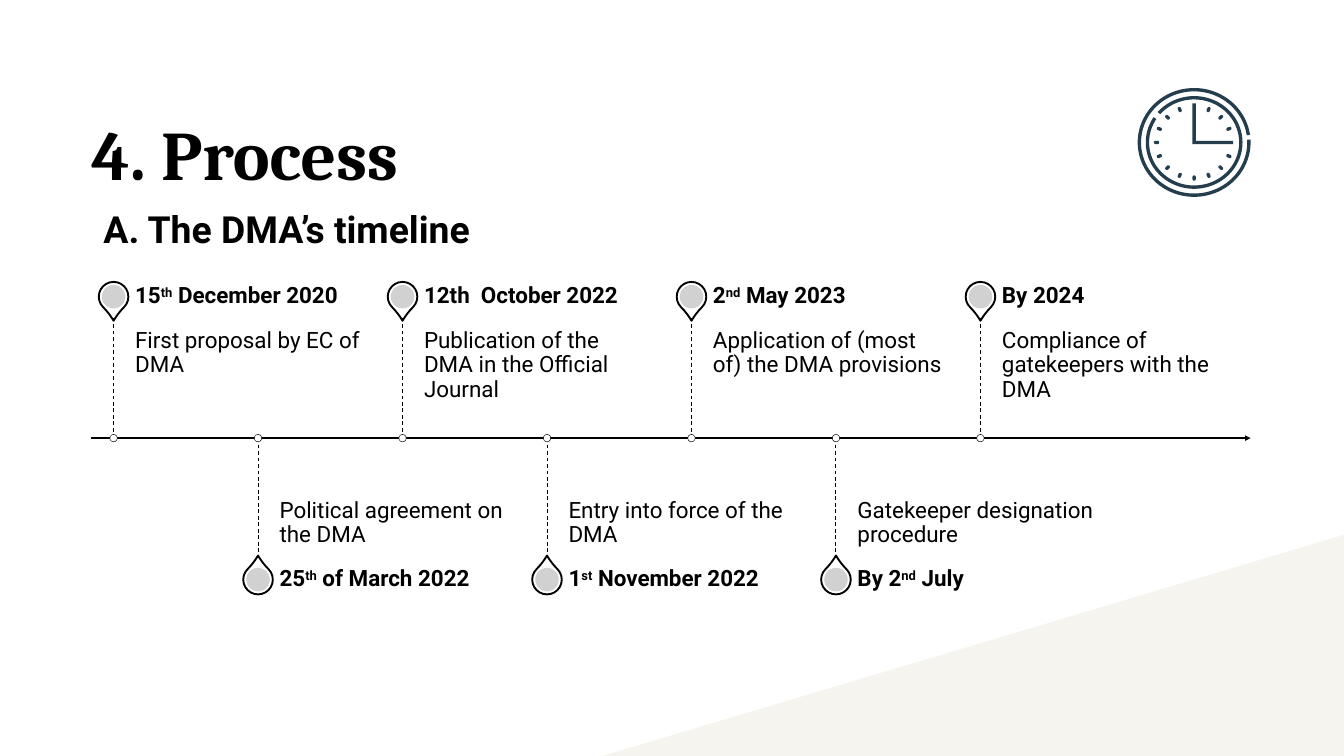
import math

from lxml import etree
from pptx import Presentation
from pptx import util as u
from pptx.dml.color import RGBColor
from pptx.enum import dml, shapes, text
from pptx.oxml.ns import qn

COLORS = {
    "ink": "000000",
    "paper": "FFFFFF",
    "sand": "F6F4EF",
    "pin": "CCCCCC",
    "clock": "243E4D",
}
MILESTONES = [
    ("15^th^ December 2020", "First proposal by EC of DMA"),
    ("25^th^ of March 2022", "Political agreement on the DMA"),
    ("12th  October 2022", "Publication of the DMA in the Official Journal"),
    ("1^st^ November 2022", "Entry into force of the DMA"),
    ("2^nd^ May 2023", "Application of (most of) the DMA provisions"),
    ("By 2^nd^ July", "Gatekeeper designation procedure"),
    ("By 2024", "Compliance of gatekeepers with the DMA"),
]


def rgb(name):
    return RGBColor.from_string(COLORS[name])


def inches(*lengths):
    return [u.Inches(length) for length in lengths]


def write(holder, words, size=24, font="Roboto", bold=False, spacing=None,
          anchor=text.MSO_ANCHOR.TOP, insets=(0, 0, 0, 0), grow=False):
    frame = holder.text_frame
    frame.word_wrap = True
    frame.auto_size = (text.MSO_AUTO_SIZE.SHAPE_TO_FIT_TEXT if grow
                       else text.MSO_AUTO_SIZE.NONE)
    frame.vertical_anchor = anchor
    (frame.margin_left, frame.margin_top,
     frame.margin_right, frame.margin_bottom) = inches(*insets)
    paragraph = frame.paragraphs[0]
    paragraph.alignment = text.PP_ALIGN.LEFT
    if spacing:
        paragraph.line_spacing = spacing
    for position, part in enumerate(words.split("^")):
        run = paragraph.add_run()
        run.text = part
        run.font.size = u.Pt(size)
        run.font.name = font
        run.font.bold = bold
        run.font.color.rgb = rgb("ink")
        if position % 2:
            run.font._element.set("baseline", "30000")


def write_box(slide, box, words, **style):
    write(slide.shapes.add_textbox(*inches(*box)), words, **style)


def paint(shape, fill, line_width=None):
    shape.shadow.inherit = False
    shape.fill.solid()
    shape.fill.fore_color.rgb = rgb(fill)
    if line_width:
        shape.line.color.rgb = rgb("ink")
        shape.line.width = u.Pt(line_width)
    else:
        shape.line.fill.background()
    return shape


def add_centred(slide, kind, x, y, width, height, fill, line_width=None):
    shape = slide.shapes.add_shape(
        kind, *inches(x - width / 2, y - height / 2, width, height))
    return paint(shape, fill, line_width)


def add_line(slide, start, end, width, dashed=False, arrow=False):
    line = slide.shapes.add_connector(
        shapes.MSO_CONNECTOR.STRAIGHT, *inches(*start, *end))
    line.line.color.rgb = rgb("ink")
    line.line.width = u.Pt(width)
    if dashed:
        line.line.dash_style = dml.MSO_LINE.DASH
    properties = line._element.spPr
    if arrow:
        etree.SubElement(properties.find(qn("a:ln")), qn("a:tailEnd"), type="triangle")
    etree.SubElement(properties, qn("a:effectLst"))


def add_outline(slide, points, fill):
    corners = [inches(*point) for point in points]
    builder = slide.shapes.build_freeform(*corners[0])
    builder.add_line_segments(corners[1:], close=True)
    paint(builder.convert_to_shape(), fill)


def add_backdrop(slide, box):
    band = slide.shapes.add_shape(shapes.MSO_SHAPE.RECTANGLE, *inches(*box))
    paint(band, "sand")
    band.rotation = 343.4


def add_headings(slide, box):
    left, top, width, height = box
    title = slide.shapes.title
    title.left, title.top, title.width, title.height = inches(left, top, 5.46, 1.33)
    write(title, "4. Process", size=74.5, font="Cambria", bold=True,
          spacing=u.Pt(104.4), grow=True)
    write_box(slide, (left + 0.18, top + height - 0.67, width - 0.18, 0.67),
              "A. The DMA’s timeline", size=40, bold=True, grow=True)


def add_milestone(slide, x, axis, above, date, event):
    stem, label, column = 1.79, 0.63, 3.58
    side = -1 if above else 1
    pin_y = axis + side * (stem + label / 2)

    drop = add_centred(slide, shapes.MSO_SHAPE.TEAR, x, pin_y, 0.44, 0.44, "paper", 2)
    drop.adjustments[0] = 1.15
    drop.rotation = 135 if above else 315
    core = add_centred(slide, shapes.MSO_SHAPE.OVAL, x, pin_y, 0.35, 0.35, "pin")
    tint = core._element.spPr.find(qn("a:solidFill"))[0]
    etree.SubElement(tint, qn("a:alpha"), val="90000")

    write_box(slide, (x + 0.32, axis - stem if above else axis, column, stem),
              event, spacing=0.9,
              anchor=text.MSO_ANCHOR.TOP if above else text.MSO_ANCHOR.BOTTOM,
              insets=(0, 0.17, 0.17, 0.25) if above else (0, 0.25, 0, 0.17))
    write_box(slide, (x + 0.32, pin_y - label / 2, column, label), date, bold=True,
              spacing=0.9, anchor=text.MSO_ANCHOR.MIDDLE, insets=(0, 0, 0.17, 0))
    add_line(slide, (x, axis), (x, axis + side * stem), 1, dashed=True)
    add_centred(slide, shapes.MSO_SHAPE.OVAL, x, axis, 0.11, 0.11, "paper", 0.5)


def add_timeline(slide, box):
    left, top, width, height = box
    axis = top + height / 2
    add_line(slide, (left, axis), (left + width, axis), 1.5, arrow=True)
    for index, (date, event) in enumerate(MILESTONES):
        add_milestone(slide, left + 0.33 + 2.15 * index, axis, index % 2 == 0, date, event)


def add_clock(slide, box):
    left, top, width, height = box
    x, y = left + width / 2, top + height / 2
    stroke = 0.05

    def on_ring(angle, inset):
        turn = math.radians(angle)
        return (x + (width / 2 - inset) * math.cos(turn),
                y + (height / 2 - inset) * math.sin(turn))

    for inset, gap_start, gap_end in ((0, 352, 357), (0.12, 213, 221)):
        sweep = gap_start + 360 - gap_end
        angles = [gap_end + sweep * step / 120 for step in range(121)]
        outer = [on_ring(angle, inset) for angle in angles]
        inner = [on_ring(angle, inset + stroke) for angle in reversed(angles)]
        add_outline(slide, outer + inner, "clock")

    half, reach = stroke / 2, 0.58
    add_outline(slide, [(x - half, y - reach), (x + half, y - reach),
                        (x + half, y - half), (x + reach, y - half),
                        (x + reach, y + half), (x - half, y + half)], "clock")
    for mark in range(1, 16):
        if mark != 12:
            angle = mark * 22.5
            tick = add_centred(slide, shapes.MSO_SHAPE.ROUNDED_RECTANGLE,
                               *on_ring(angle, 0.28), 0.08, stroke, "clock")
            tick.adjustments[0] = 0.5
            tick.rotation = angle


def main():
    deck = Presentation()
    deck.slide_width, deck.slide_height = inches(20, 11.25)
    slide = deck.slides.add_slide(deck.slide_layouts[5])
    add_backdrop(slide, (8.02, 9.6, 13.68, 4.97))
    add_headings(slide, (1.36, 1.45, 17.28, 2.29))
    add_timeline(slide, (1.36, 4.1, 17.25, 4.84))
    add_clock(slide, (16.93, 1.31, 1.68, 1.62))
    deck.save("out.pptx")


if __name__ == "__main__":
    main()
